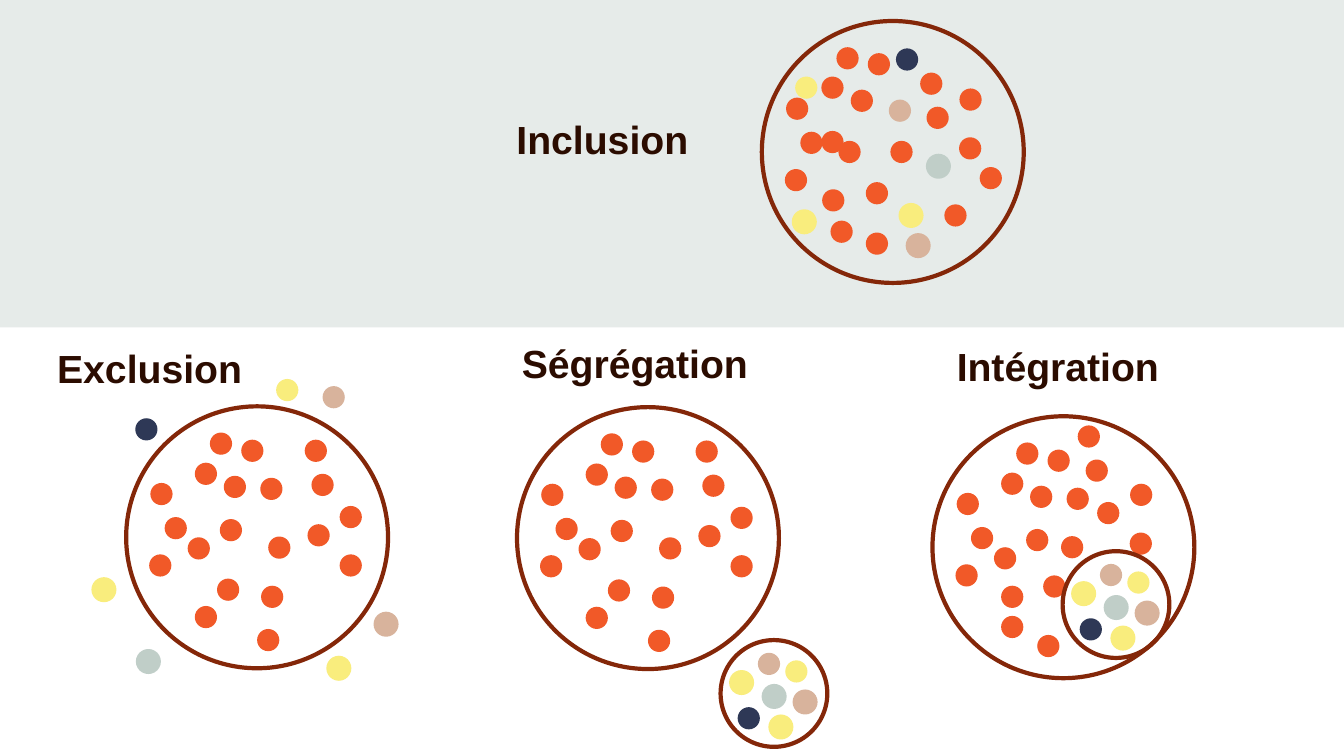
from pptx import Presentation
from pptx import util as u
from pptx.dml.color import RGBColor
from pptx.enum import shapes, text

ORANGE, YELLOW, NAVY = "F15928", "F9ED7D", "2E3856"
SAND, SAGE, BROWN = "D8B39C", "C0CEC8", "842709"
RING, SMALL_RING, DOT = 6.6, 2.69, 0.56

MINORITY = [(SAND, False), (YELLOW, True), (YELLOW, True), (NAVY, False),
            (SAGE, True), (SAND, True), (YELLOW, False)]

WEST = [(1.73, 5.03), (0.97, 2.79), (0.58, 3.73), (0.61, 1.93)]
NORTH = [(3.38, 1.8), (2.36, 2.84), (1.55, 3.3), (2.46, 1.75),
         (2.9, 0.84), (2.11, 0.66), (1.73, 1.42)]
EAST = [(4.98, 1.7), (3.24, 3.02), (4.15, 2.16), (4.97, 2.93)]

APART = WEST + NORTH + [
    (5.38, 2.51), (4.5, 0.84), (3.3, 5.61), (3.4, 4.52), (2.29, 4.34),
    (3.58, 3.28), (4.67, 1.7), (4.57, 2.97), (5.38, 3.73)]
INTEGRATED = WEST + NORTH + EAST + [
    (3.66, 0.23), (2.64, 5.51), (2.79, 4.01), (1.73, 4.27), (3.86, 1.09)]
INCLUDED = WEST + EAST + [
    (5.49, 3.68), (4.6, 4.62), (2.62, 5.33), (2.62, 4.06), (1.52, 4.24), (1.93, 3.02),
    (1.5, 2.77), (2.24, 1.73), (2.67, 0.81), (1.88, 0.66), (1.5, 1.4), (3.99, 1.3)]

OUTSIDE = [(4.95, -0.51), (5.08, 6.32), (-0.84, 4.34), (0.23, 0.3),
           (0.28, 6.15), (6.27, 5.21), (3.78, -0.69)]
MIXED = [(3.2, 1.98), (3.48, 4.62), (0.79, 4.78), (3.38, 0.69),
         (4.17, 3.38), (3.66, 5.38), (0.84, 1.4)]
CLUSTER = [(0.94, 0.32), (1.24, 1.91), (0.25, 0.79), (0.43, 1.69),
           (1.07, 1.14), (1.85, 1.28), (1.63, 0.51)]


def rgb(value):
    return RGBColor.from_string(value)


def add_shape(parent, kind, x, y, w, h, fill=None, line=None, width=2):
    sp = parent.shapes.add_shape(kind, u.Cm(x), u.Cm(y), u.Cm(w), u.Cm(h))
    sp.shadow.inherit = False
    if fill:
        sp.fill.solid()
        sp.fill.fore_color.rgb = rgb(fill)
    else:
        sp.fill.background()
    if line:
        sp.line.color.rgb = rgb(line)
        sp.line.width = u.Pt(width)
    else:
        sp.line.fill.background()
    return sp


def add_text(s, content, x, y, w, h, size=28, color="2B0C00", bold=True, font="Arial",
             align=text.PP_ALIGN.LEFT):
    tf = s.shapes.add_textbox(u.Cm(x), u.Cm(y), u.Cm(w), u.Cm(h)).text_frame
    tf.word_wrap = True
    tf.auto_size = text.MSO_AUTO_SIZE.SHAPE_TO_FIT_TEXT
    p = tf.paragraphs[0]
    p.alignment = align
    r = p.add_run()
    r.text = content
    r.font.name, r.font.size, r.font.bold = font, u.Pt(size), bold
    r.font.color.rgb = rgb(color)


def add_ring(group, x, y, size):
    add_shape(group, shapes.MSO_SHAPE.OVAL, x, y, size, size, line=BROWN, width=3)


def add_dot(group, x, y, color, outlined=False):
    add_shape(group, shapes.MSO_SHAPE.OVAL, x, y, DOT, DOT, fill=color,
              line=color if outlined else None)


def add_minority(group, x, y, places):
    for (dx, dy), (color, outlined) in zip(places, MINORITY):
        add_dot(group, x + dx, y + dy, color, outlined)


def add_society(s, x, y, majority, minority, cluster_at=None):
    group = s.shapes.add_group_shape()
    add_ring(group, x, y, RING)
    for dx, dy in majority:
        add_dot(group, x + dx, y + dy, ORANGE)
    if cluster_at:
        x, y = x + cluster_at[0], y + cluster_at[1]
    add_minority(group, x, y, minority)
    if cluster_at:
        add_ring(group, x, y, SMALL_RING)


def add_panel(s, title, title_at, ring_at, majority, minority, cluster_at=None,
              align=text.PP_ALIGN.LEFT):
    add_text(s, title, *title_at, 6.48, 1.45, align=align)
    add_society(s, *ring_at, majority, minority, cluster_at)


def main():
    prs = Presentation()
    prs.slide_width, prs.slide_height = u.Cm(33.87), u.Cm(19.05)
    s = prs.slides.add_slide(prs.slide_layouts[6])
    center = text.PP_ALIGN.CENTER
    add_shape(s, shapes.MSO_SHAPE.RECTANGLE, 0, 0, 33.87, 8.25, fill="E6EBE9")
    add_panel(s, "Inclusion", (11.94, 2.79), (19.2, 0.53), INCLUDED, MIXED, align=center)
    add_panel(s, "Exclusion", (1.19, 8.56), (3.18, 10.24), APART, OUTSIDE)
    add_panel(s, "Ségrégation", (12.9, 8.43), (13.03, 10.26), APART, CLUSTER, (5.13, 5.87))
    add_panel(s, "Intégration", (23.42, 8.51), (23.5, 10.49), INTEGRATED, CLUSTER,
              (3.28, 3.4), align=center)
    prs.save("out.pptx")


if __name__ == "__main__":
    main()
